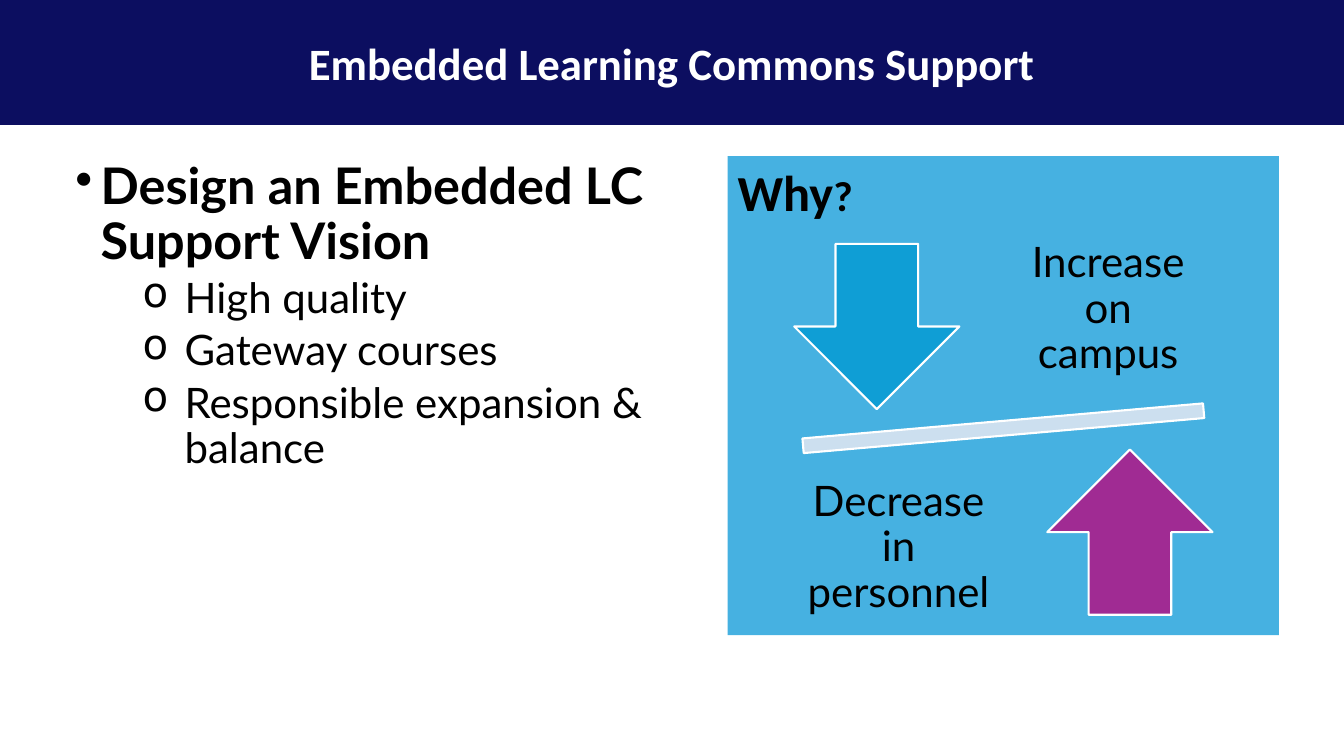
from dataclasses import dataclass

from lxml.etree import SubElement
from pptx import Presentation
from pptx.dml.color import RGBColor
from pptx.enum.shapes import MSO_SHAPE
from pptx.enum.text import MSO_ANCHOR, PP_ALIGN
from pptx.oxml.ns import qn
from pptx.util import Pt


@dataclass(frozen=True)
class Theme:
    navy: str = "0C0E60"
    sky: str = "46B1E1"
    blue: str = "0F9ED5"
    purple: str = "A02B93"
    pale: str = "CCDFEF"
    white: str = "FFFFFF"
    black: str = "000000"
    heading_font: str = "Calibri"
    body_font: str = "Lato"
    title_size: int = 32
    lead_size: int = 36
    text_size: int = 30


THEME = Theme()


def set_all(target, values):
    for name, value in values.items():
        setattr(target, name, value)


def add_run(paragraph, text, font, size, color=THEME.black, bold=False):
    run = paragraph.add_run()
    run.text = text
    set_all(run.font, {"name": font, "size": Pt(size), "bold": bold})
    run.font.color.rgb = RGBColor.from_string(color)


def paint(shape, fill, outline=None):
    shape.fill.solid()
    shape.fill.fore_color.rgb = RGBColor.from_string(fill)
    if outline:
        shape.line.color.rgb = RGBColor.from_string(outline)
        shape.line.width = Pt(1.5)
    else:
        shape.line.fill.background()


def add_painted(slide, preset, box, fill, outline=None):
    shape = slide.shapes.add_shape(preset, *map(Pt, box))
    shape.shadow.inherit = False
    paint(shape, fill, outline)
    return shape


def add_bullet(paragraph, mark, margin, hanging):
    properties = paragraph._p.get_or_add_pPr()
    properties.set("marL", str(Pt(margin)))
    properties.set("indent", str(-Pt(hanging)))
    SubElement(properties, qn("a:buChar"), char=mark)


def title_band(slide, box):
    title = slide.shapes.title
    set_all(title, dict(zip(("left", "top", "width", "height"), map(Pt, box))))
    paint(title, THEME.navy)
    set_all(title.text_frame, {"word_wrap": True, "vertical_anchor": MSO_ANCHOR.MIDDLE})
    heading = title.text_frame.paragraphs[0]
    heading.alignment = PP_ALIGN.CENTER
    add_run(heading, "Embedded Learning Commons Support", THEME.heading_font,
            THEME.title_size, THEME.white, True)


def vision_list(slide, box):
    frame = slide.shapes.add_textbox(*map(Pt, box)).text_frame
    frame.word_wrap = True
    lead = frame.paragraphs[0]
    add_bullet(lead, "•", 18, 18)
    lead.line_spacing = 0.9
    add_run(lead, "Design an Embedded LC Support Vision", THEME.body_font,
            THEME.lead_size, bold=True)
    for goal in ("High quality", "Gateway courses", "Responsible expansion & balance"):
        item = frame.add_paragraph()
        add_bullet(item, "o", 78, 30)
        set_all(item, {"level": 1, "line_spacing": 0.9, "space_before": Pt(5)})
        add_run(item, goal, THEME.body_font, THEME.text_size)


def trend_label(slide, box, text):
    frame = slide.shapes.add_textbox(*map(Pt, box)).text_frame
    inset = Pt(16.8)
    set_all(frame, {"word_wrap": True, "vertical_anchor": MSO_ANCHOR.MIDDLE,
                    "margin_left": inset, "margin_right": inset,
                    "margin_top": inset, "margin_bottom": inset})
    label = frame.paragraphs[0]
    set_all(label, {"alignment": PP_ALIGN.CENTER, "line_spacing": 0.9})
    add_run(label, text, THEME.body_font, THEME.text_size)


def why_panel(slide, box):
    """Panel with a tilted balance bar between two opposing arrows."""
    left, top, width, height = box
    panel = add_painted(slide, MSO_SHAPE.RECTANGLE, box, THEME.sky)
    set_all(panel.text_frame, {"word_wrap": True, "vertical_anchor": MSO_ANCHOR.TOP})
    question = panel.text_frame.paragraphs[0]
    question.alignment = PP_ALIGN.LEFT
    for text, size in (("Why", THEME.lead_size), ("?", THEME.text_size)):
        add_run(question, text, THEME.heading_font, size, bold=True)

    bar = add_painted(slide, MSO_SHAPE.MATH_MINUS,
                      (left + 1.5, top + 172, width - 3, 44.6), THEME.pale, THEME.white)
    bar.rotation = 355

    arrow, margin = 118, 47.5
    add_painted(slide, MSO_SHAPE.DOWN_ARROW,
                (left + margin, top + 62.6, arrow, arrow), THEME.blue, THEME.white)
    add_painted(slide, MSO_SHAPE.UP_ARROW,
                (left + width - margin - arrow, top + 209.5, arrow, arrow),
                THEME.purple, THEME.white)

    label_height = 124
    trend_label(slide, (left + 185, top + 47.5, 173.5, label_height), "Increase on campus")
    trend_label(slide, (left + 31, top + height - label_height, 182, label_height),
                "Decrease in personnel")


def main():
    deck = Presentation()
    set_all(deck, {"slide_width": Pt(960), "slide_height": Pt(540)})
    slide = deck.slides.add_slide(deck.slide_layouts[5])
    title_band(slide, (0, 0, 960, 89.3))
    vision_list(slide, (46.8, 111.6, 433.4, 270))
    why_panel(slide, (519.8, 111.6, 393.8, 342))
    deck.save("out.pptx")


if __name__ == "__main__":
    main()
